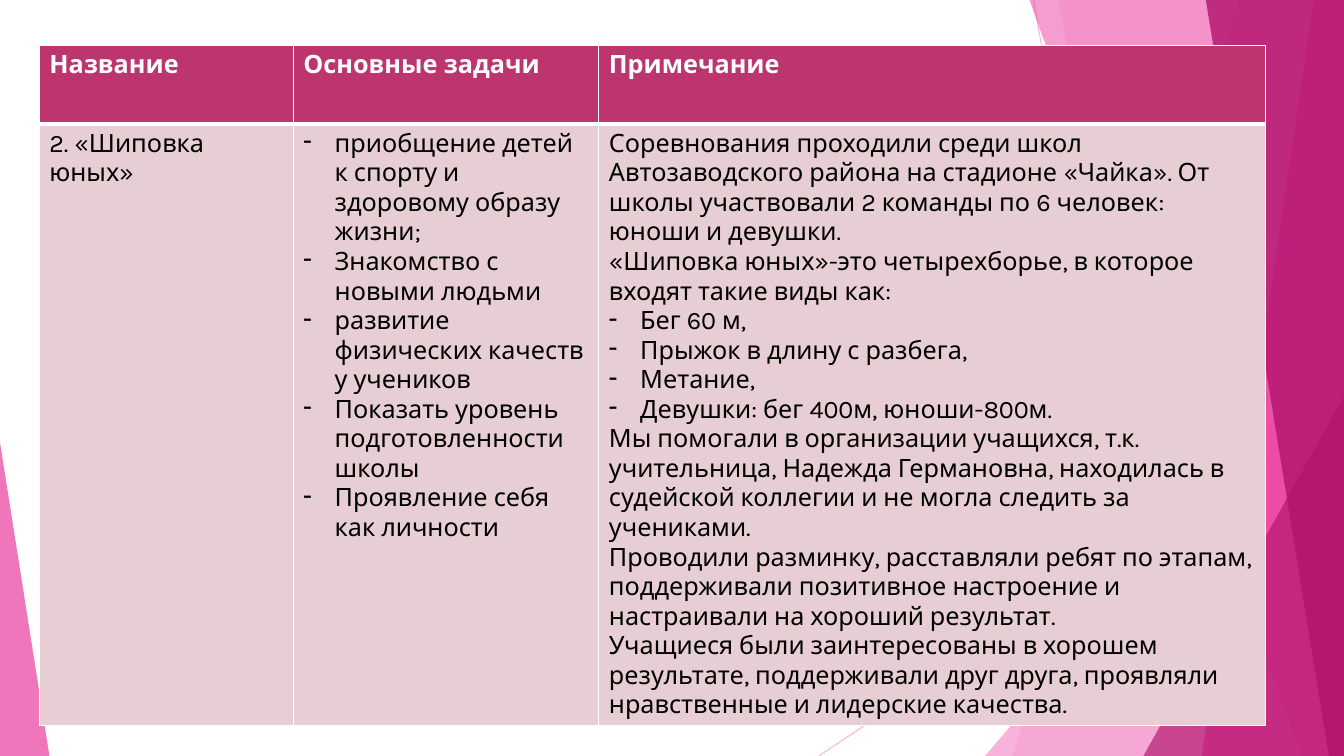
import dataclasses

import pptx
import pptx.dml.color
import pptx.enum.shapes
import pptx.oxml
import pptx.oxml.ns
import pptx.util

PX = 9144


@dataclasses.dataclass(frozen=True)
class Theme:
    pale: str = "F496CB"
    pink: str = "EB3D9F"
    deep: str = "B2136D"
    header: str = "BC356F"
    body: str = "E7CED5"
    white: str = "FFFFFF"
    black: str = "000000"
    font: str = "Karla"
    size: int = 18
    ray_width: float = 0.75
    border: int = 1
    header_border: int = 3


@dataclasses.dataclass(frozen=True)
class Ray:
    start: tuple[int, int]
    end: tuple[int, int]


@dataclasses.dataclass(frozen=True)
class Facet:
    points: tuple[tuple[int, int], ...]
    color: str
    alpha: int


@dataclasses.dataclass(frozen=True)
class Wedge:
    left: int
    top: int
    width: int
    height: int
    apex: int
    color: str
    alpha: int


@dataclasses.dataclass(frozen=True)
class Line:
    text: str
    bullet: bool = False


THEME = Theme()
WIDTH, HEIGHT = 1333, 750
INDENT = 31
RAY_ALPHA = 70
TABLE_LEFT, TABLE_TOP = 39, 45
COLUMNS = (252, 303, 661)
ROWS = (78, 585)


def right_facet(top: int, bottom: int, color: str, alpha: int) -> Facet:
    return Facet(((top, 0), (WIDTH, 0), (WIDTH, HEIGHT), (bottom, HEIGHT)), color, alpha)


RAYS = (Ray((1025, 0), (1158, HEIGHT)), Ray((WIDTH, 403), (812, HEIGHT)))
DECOR = (
    right_facet(1228, 1004, THEME.pale, 36),
    right_facet(1050, 1183, THEME.pale, 20),
    Wedge(977, 333, 356, 417, 1, THEME.pale, 72),
    right_facet(1021, 1291, THEME.pink, 50),
    right_facet(1303, 1192, THEME.pink, 70),
    right_facet(1196, 1318, THEME.deep, 80),
    Wedge(1134, 393, 199, 357, 1, THEME.deep, 66),
    Wedge(0, 439, 49, 311, 0, THEME.pink, 70),
)
HEADINGS = ("Название", "Основные задачи", "Примечание")
EVENT = (Line("2. «Шиповка юных»"),)
GOALS = tuple(Line(text, True) for text in (
    "приобщение детей к спорту и здоровому образу жизни;",
    "Знакомство с новыми людьми",
    "развитие физических качеств у учеников",
    "Показать уровень подготовленности школы",
    "Проявление себя как личности",
))
NOTES = (
    Line("Соревнования проходили среди школ Автозаводского района на стадионе «Чайка». "
         "От школы участвовали 2 команды по 6 человек: юноши и девушки."),
    Line("«Шиповка юных»-это четырехборье, в которое входят такие виды как:"),
    Line("Бег 60 м,", True),
    Line("Прыжок в длину с разбега,", True),
    Line("Метание,", True),
    Line("Девушки: бег 400м, юноши-800м.", True),
    Line("Мы помогали в организации учащихся, т.к. учительница, Надежда Германовна, "
         "находилась в судейской коллегии и не могла следить за учениками."),
    Line("Проводили разминку, расставляли ребят по этапам, поддерживали позитивное "
         "настроение и настраивали на хороший результат."),
    Line("Учащиеся были заинтересованы в хорошем результате, поддерживали друг друга, "
         "проявляли нравственные и лидерские качества."),
)


def rgb(color: str) -> pptx.dml.color.RGBColor:
    return pptx.dml.color.RGBColor.from_string(color)


def set_alpha(shape, percent: int) -> None:
    for color in shape._element.spPr.iter(pptx.oxml.ns.qn("a:srgbClr")):
        pptx.oxml.ns.qn("a:alpha")
        alpha = color.makeelement(pptx.oxml.ns.qn("a:alpha"), {"val": str(percent * 1000)})
        color.append(alpha)


def draw_ray(page, ray: Ray) -> None:
    line = page.shapes.add_connector(
        pptx.enum.shapes.MSO_CONNECTOR.STRAIGHT,
        *(value * PX for value in ray.start + ray.end))
    line.line.color.rgb = rgb(THEME.pale)
    line.line.width = pptx.util.Pt(THEME.ray_width)
    set_alpha(line, RAY_ALPHA)
    properties = line._element.spPr
    properties.append(properties.makeelement(pptx.oxml.ns.qn("a:effectLst"), {}))


def draw_decor(page, item: Facet | Wedge) -> None:
    if isinstance(item, Facet):
        points = [(x * PX, y * PX) for x, y in item.points]
        builder = page.shapes.build_freeform(*points[0])
        builder.add_line_segments(points[1:], close=True)
        shape = builder.convert_to_shape()
    else:
        shape = page.shapes.add_shape(
            pptx.enum.shapes.MSO_SHAPE.ISOSCELES_TRIANGLE,
            item.left * PX, item.top * PX, item.width * PX, item.height * PX)
        shape.adjustments[0] = item.apex
    shape.shadow.inherit = False
    shape.fill.solid()
    shape.fill.fore_color.rgb = rgb(item.color)
    shape.line.fill.background()
    set_alpha(shape, item.alpha)


def set_borders(cell, top: int, bottom: int) -> None:
    properties = cell._tc.get_or_add_tcPr()
    widths = {"lnL": THEME.border, "lnR": THEME.border, "lnT": top, "lnB": bottom}
    for position, (side, width) in enumerate(widths.items()):
        properties.insert(position, pptx.oxml.parse_xml(
            f'<a:{side} {pptx.oxml.ns.nsdecls("a")} w="{pptx.util.Pt(width)}">'
            f'<a:solidFill><a:srgbClr val="{THEME.white}"/></a:solidFill></a:{side}>'))


def add_bullet(para) -> None:
    properties = para._p.get_or_add_pPr()
    properties.set("marL", str(INDENT * PX))
    properties.set("indent", str(-INDENT * PX))
    properties.append(properties.makeelement(pptx.oxml.ns.qn("a:buChar"), {"char": "-"}))


def fill_cell(cell, lines: tuple[Line, ...], heading: bool) -> None:
    cell.fill.solid()
    cell.fill.fore_color.rgb = rgb(THEME.header if heading else THEME.body)
    set_borders(cell, THEME.border if heading else THEME.header_border,
                THEME.header_border if heading else THEME.border)
    cell.text_frame.text = "\n".join(line.text for line in lines)
    for para, line in zip(cell.text_frame.paragraphs, lines):
        if line.bullet:
            add_bullet(para)
        for span in para.runs:
            span.font.name = THEME.font
            span.font.size = pptx.util.Pt(THEME.size)
            span.font.bold = heading
            span.font.color.rgb = rgb(THEME.white if heading else THEME.black)


def draw_table(page) -> None:
    table = page.shapes.add_table(
        len(ROWS), len(COLUMNS), TABLE_LEFT * PX, TABLE_TOP * PX,
        sum(COLUMNS) * PX, sum(ROWS) * PX).table
    table.horz_banding = False
    for column, width in zip(table.columns, COLUMNS):
        column.width = width * PX
    for row, height in zip(table.rows, ROWS):
        row.height = height * PX
    headings = tuple((Line(text),) for text in HEADINGS)
    for row_index, contents in enumerate((headings, (EVENT, GOALS, NOTES))):
        for column_index, lines in enumerate(contents):
            fill_cell(table.cell(row_index, column_index), lines, row_index == 0)


def main() -> None:
    deck = pptx.Presentation()
    deck.slide_width, deck.slide_height = WIDTH * PX, HEIGHT * PX
    page = deck.slides.add_slide(deck.slide_layouts[6])
    for ray in RAYS:
        draw_ray(page, ray)
    for item in DECOR:
        draw_decor(page, item)
    draw_table(page)
    deck.save("out.pptx")


if __name__ == "__main__":
    main()
